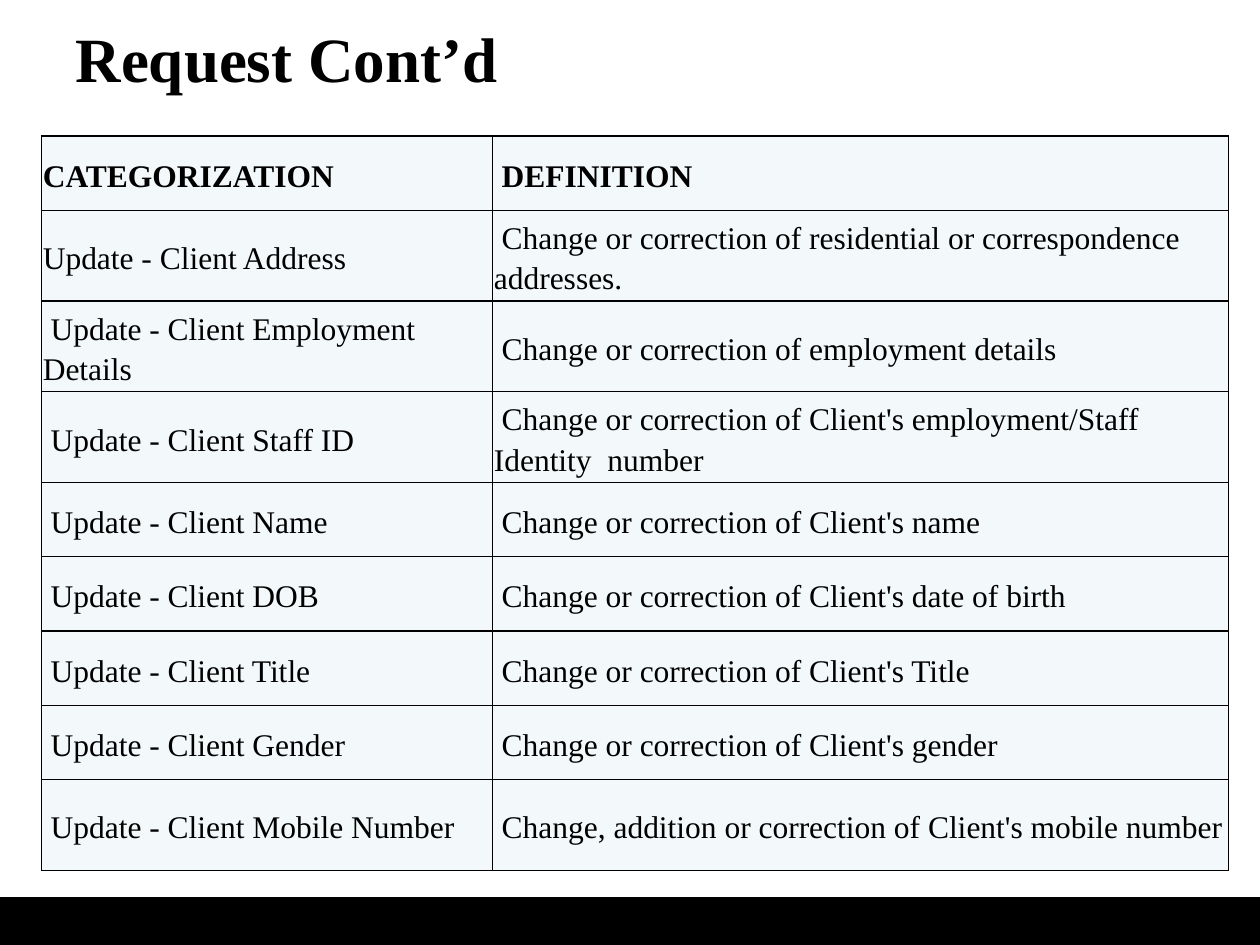
import pptx
import pptx.dml.color
import pptx.enum.shapes
import pptx.enum.text
import pptx.oxml
import pptx.oxml.ns
import pptx.util
from pptx.util import Inches

FONT = "Times New Roman"
BLACK = "000000"
CELL_FILL = "F3F9FA"

TITLE = "Request Cont’d"
ROWS = [
    ("CATEGORIZATION", " DEFINITION"),
    ("Update - Client Address",
     " Change or correction of residential or correspondence addresses."),
    (" Update - Client Employment Details",
     " Change or correction of employment details"),
    (" Update - Client Staff ID",
     " Change or correction of Client's employment/Staff Identity  number"),
    (" Update - Client Name", " Change or correction of Client's name"),
    (" Update - Client DOB", " Change or correction of Client's date of birth"),
    (" Update - Client Title", " Change or correction of Client's Title"),
    (" Update - Client Gender", " Change or correction of Client's gender"),
    (" Update - Client Mobile Number",
     " Change, addition or correction of Client's mobile number"),
]
COLUMN_WIDTHS = [3.58, 5.84]
SHORT_ROW, TALL_ROW = 0.59, 0.72
TALL_ROWS = {1, 2, 3, 8}


def color(hex_value):
    return pptx.dml.color.RGBColor.from_string(hex_value)


def paint(shape, hex_value):
    shape.fill.solid()
    shape.fill.fore_color.rgb = color(hex_value)


def write(text_frame, text, size=18, bold=False, line_spacing=1.0):
    text_frame.word_wrap = True
    paragraph = text_frame.paragraphs[0]
    paragraph.alignment = pptx.enum.text.PP_ALIGN.LEFT
    paragraph.line_spacing = line_spacing
    run = paragraph.add_run()
    run.text = text
    run.font.name = FONT
    run.font.size = pptx.util.Pt(size)
    run.font.bold = bold
    run.font.color.rgb = color(BLACK)


def add_borders(cell, hex_value=BLACK, width=1):
    properties = cell._tc.get_or_add_tcPr()
    for position, side in enumerate(("lnL", "lnR", "lnT", "lnB")):
        border = pptx.oxml.parse_xml(
            f'<a:{side} {pptx.oxml.ns.nsdecls("a")} w="{pptx.util.Pt(width)}">'
            f'<a:solidFill><a:srgbClr val="{hex_value}"/></a:solidFill></a:{side}>')
        properties.insert(position, border)


def add_definition_table(slide):
    heights = [TALL_ROW if index in TALL_ROWS else SHORT_ROW
               for index in range(len(ROWS))]
    table = slide.shapes.add_table(
        len(ROWS), len(COLUMN_WIDTHS), Inches(0.33), Inches(1.08),
        Inches(sum(COLUMN_WIDTHS)), Inches(sum(heights))).table
    table.horz_banding = False
    for column, width in zip(table.columns, COLUMN_WIDTHS):
        column.width = Inches(width)
    for row_index, (row, height, texts) in enumerate(zip(table.rows, heights, ROWS)):
        row.height = Inches(height)
        for cell, text in zip(row.cells, texts):
            cell.margin_left = cell.margin_right = cell.margin_top = Inches(0.01)
            cell.margin_bottom = 0
            cell.vertical_anchor = pptx.enum.text.MSO_ANCHOR.MIDDLE
            paint(cell, CELL_FILL)
            add_borders(cell)
            write(cell.text_frame, text, bold=row_index == 0, line_spacing=1.15)


def main():
    presentation = pptx.Presentation()
    presentation.slide_width = Inches(10)
    presentation.slide_height = Inches(7.5)
    slide = presentation.slides.add_slide(presentation.slide_layouts[5])

    footer_bar = slide.shapes.add_shape(
        pptx.enum.shapes.MSO_SHAPE.RECTANGLE,
        Inches(0), Inches(7.12), Inches(10), Inches(0.38))
    footer_bar.shadow.inherit = False
    paint(footer_bar, BLACK)
    footer_bar.line.fill.background()

    title = slide.shapes.title
    title.left, title.top = Inches(0.5), Inches(0.08)
    title.width, title.height = Inches(9), Inches(0.75)
    title.text_frame.vertical_anchor = pptx.enum.text.MSO_ANCHOR.MIDDLE
    write(title.text_frame, TITLE, size=36, bold=True)

    add_definition_table(slide)
    presentation.save("out.pptx")


if __name__ == "__main__":
    main()
